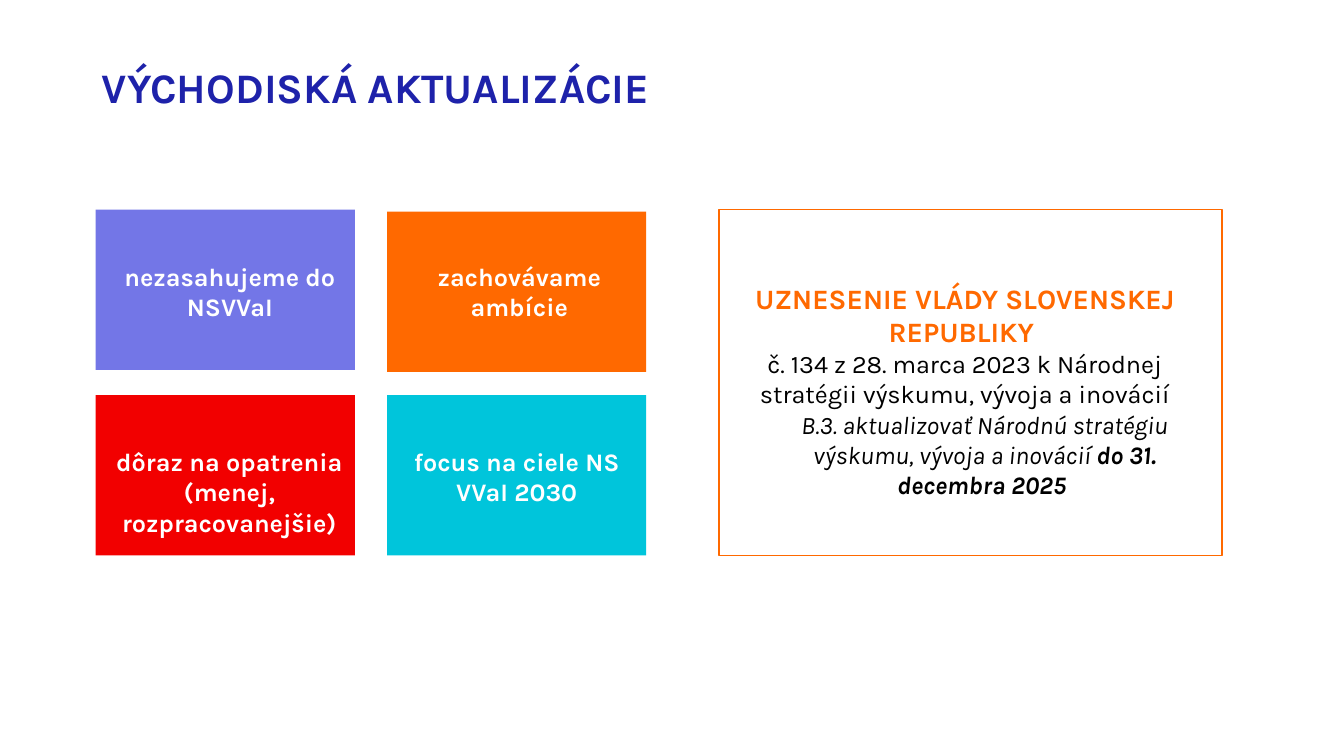
from dataclasses import dataclass

from pptx import Presentation
from pptx.dml.color import RGBColor
from pptx.enum.shapes import MSO_SHAPE
from pptx.enum.text import MSO_ANCHOR, MSO_AUTO_SIZE, PP_ALIGN
from pptx.shapes.autoshape import Shape
from pptx.slide import Slide
from pptx.text.text import TextFrame, _Paragraph
from pptx.util import Inches, Pt

FONT = "Karla"
NAVY = RGBColor(0x1E, 0x22, 0xAA)
VIOLET = RGBColor(0x73, 0x76, 0xE7)
ORANGE = RGBColor(0xFF, 0x69, 0x00)
RED = RGBColor(0xF2, 0x00, 0x00)
CYAN = RGBColor(0x00, 0xC5, 0xDB)
WHITE = RGBColor(0xFF, 0xFF, 0xFF)
BLACK = RGBColor(0x00, 0x00, 0x00)

TILE_WIDTH, TILE_HEIGHT = 2.57, 1.59


@dataclass(frozen=True)
class Box:
    left: float
    top: float
    width: float
    height: float

    def lengths(self) -> tuple[Inches, Inches, Inches, Inches]:
        return (Inches(self.left), Inches(self.top),
                Inches(self.width), Inches(self.height))


@dataclass(frozen=True)
class Principle:
    left: float
    top: float
    color: RGBColor
    label: Box
    lines: tuple[str, ...]


PRINCIPLES = (
    Principle(0.95, 2.08, VIOLET, Box(0.42, 2.54, 3.72, 0.71),
              ("nezasahujeme do", "NSVVaI")),
    Principle(3.84, 2.1, ORANGE, Box(3.29, 2.54, 3.72, 0.71),
              ("zachovávame", "ambície")),
    Principle(0.95, 3.92, RED, Box(0.99, 4.38, TILE_WIDTH, 1.01),
              ("dôraz na opatrenia (menej, rozpracovanejšie)",)),
    Principle(3.84, 3.92, CYAN, Box(3.84, 4.38, TILE_WIDTH, 0.71),
              ("focus na ciele NS VVaI 2030",)),
)


def add_rectangle(slide: Slide, box: Box) -> Shape:
    rectangle = slide.shapes.add_shape(MSO_SHAPE.RECTANGLE, *box.lengths())
    rectangle.shadow.inherit = False
    return rectangle


def add_text_frame(slide: Slide, box: Box) -> TextFrame:
    frame = slide.shapes.add_textbox(*box.lengths()).text_frame
    frame.word_wrap = True
    frame.auto_size = MSO_AUTO_SIZE.SHAPE_TO_FIT_TEXT
    return frame


def format_paragraph(paragraph: _Paragraph, size: int, color: RGBColor,
                     bold: bool = False,
                     align: PP_ALIGN = PP_ALIGN.CENTER) -> None:
    paragraph.alignment = align
    font = paragraph.font
    font.name = FONT
    font.size = Pt(size)
    font.bold = bold
    font.color.rgb = color


def add_title(slide: Slide) -> None:
    title = slide.shapes.title
    title.left, title.top, title.width, title.height = Box(
        0.91, 0.63, 9.01, 0.53).lengths()
    frame = title.text_frame
    frame.text = "VÝCHODISKÁ AKTUALIZÁCIE"
    frame.auto_size = MSO_AUTO_SIZE.NONE
    frame.vertical_anchor = MSO_ANCHOR.MIDDLE
    heading = frame.paragraphs[0]
    heading.line_spacing = 0.9
    format_paragraph(heading, 30, NAVY, bold=True, align=PP_ALIGN.LEFT)


def add_principle(slide: Slide, principle: Principle) -> None:
    tile = add_rectangle(slide, Box(principle.left, principle.top,
                                    TILE_WIDTH, TILE_HEIGHT))
    tile.fill.solid()
    tile.fill.fore_color.rgb = principle.color
    tile.line.fill.background()
    label = add_text_frame(slide, principle.label)
    label.text = "\n".join(principle.lines)
    for line in label.paragraphs:
        format_paragraph(line, 18, WHITE, bold=True)


def add_resolution(slide: Slide) -> None:
    border = add_rectangle(slide, Box(7.13, 2.08, 4.99, 3.43))
    border.fill.background()
    border.line.color.rgb = ORANGE
    border.line.width = Pt(1)

    resolution = add_text_frame(slide, Box(7.28, 2.74, 4.58, 3.28))
    heading = resolution.paragraphs[0]
    heading.text = "UZNESENIE VLÁDY SLOVENSKEJ REPUBLIKY "
    format_paragraph(heading, 20, ORANGE, bold=True)

    reference = resolution.add_paragraph()
    reference.text = ("č. 134 z 28. marca 2023 k Národnej stratégii "
                      "výskumu, vývoja a inovácií")
    format_paragraph(reference, 18, BLACK)

    task = resolution.add_paragraph()
    task_properties = task._p.get_or_add_pPr()
    task_properties.set("marL", str(Inches(0.39)))
    task_properties.set("indent", "0")
    format_paragraph(task, 18, BLACK)
    task.font.italic = True
    task.add_run().text = ("B.3. aktualizovať Národnú stratégiu výskumu, "
                           "vývoja a inovácií ")
    deadline = task.add_run()
    deadline.text = "do 31. decembra 2025 "
    deadline.font.bold = True


def main() -> None:
    presentation = Presentation()
    presentation.slide_width = Inches(13.33)
    presentation.slide_height = Inches(7.5)
    slide = presentation.slides.add_slide(presentation.slide_layouts[5])

    # Heading
    add_title(slide)

    # Four principles of the update
    for principle in PRINCIPLES:
        add_principle(slide, principle)

    # Government resolution
    add_resolution(slide)

    presentation.save("out.pptx")


if __name__ == "__main__":
    main()
